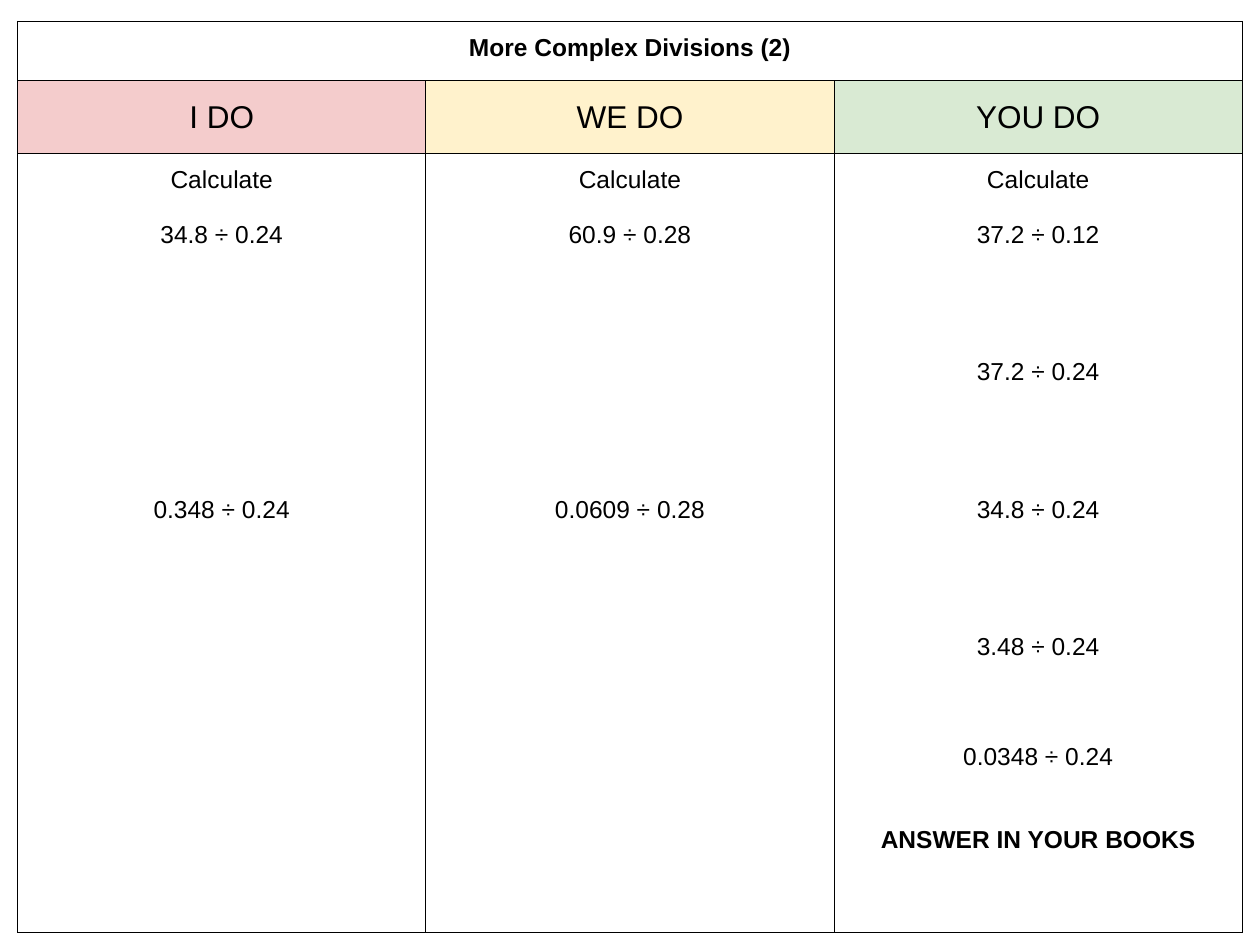
from lxml.etree import SubElement
from pptx import Presentation
from pptx.dml.color import RGBColor
from pptx.enum.text import MSO_ANCHOR, PP_ALIGN
from pptx.oxml.ns import qn
from pptx.util import Inches, Pt

BLACK = RGBColor(0x00, 0x00, 0x00)
PINK = RGBColor(0xF4, 0xCC, 0xCC)
CREAM = RGBColor(0xFF, 0xF2, 0xCC)
GREEN = RGBColor(0xD9, 0xEA, 0xD3)

LINE_PITCH = 15.7  # points from one 14 pt line to the next
ROW_HEIGHTS = (0.47, 0.58, 6.18)
COLUMN_WIDTH = 3.24
TITLE = "More Complex Divisions (2)"
ANSWER_NOTE = "ANSWER IN YOUR BOOKS"

# Heading, colour, and the lines below it as (text, empty lines above)
COLUMNS = [
    ("I DO", PINK,
     [("Calculate", 0), ("34.8 ÷ 0.24", 1), ("0.348 ÷ 0.24", 9)]),
    ("WE DO", CREAM,
     [("Calculate", 0), ("60.9 ÷ 0.28", 1), ("0.0609 ÷ 0.28", 9)]),
    ("YOU DO", GREEN,
     [("Calculate", 0), ("37.2 ÷ 0.12", 1), ("37.2 ÷ 0.24", 4),
      ("34.8 ÷ 0.24", 4), ("3.48 ÷ 0.24", 4), ("0.0348 ÷ 0.24", 3),
      (ANSWER_NOTE, 2)]),
]


def add_borders(cell):
    """Draw a thin black line on all four sides; call before filling."""
    tc_pr = cell._tc.get_or_add_tcPr()
    for side in ("lnL", "lnR", "lnT", "lnB"):
        ln = SubElement(tc_pr, qn(f"a:{side}"), w=str(Pt(0.75)))
        fill = SubElement(ln, qn("a:solidFill"))
        SubElement(fill, qn("a:srgbClr"), val=str(BLACK))


def style_cell(cell, color=None):
    cell.margin_left = cell.margin_right = Inches(0.1)
    cell.margin_top = cell.margin_bottom = Inches(0.1)
    add_borders(cell)
    if color is None:
        cell.fill.background()
    else:
        cell.fill.solid()
        cell.fill.fore_color.rgb = color


def write_lines(cell, lines, size=14, bold_texts=()):
    tf = cell.text_frame
    for i, (text, gap) in enumerate(lines):
        p = tf.add_paragraph() if i else tf.paragraphs[0]
        p.text = text
        p.alignment = PP_ALIGN.CENTER
        p.space_before = Pt(gap * LINE_PITCH)
        p.font.name = "Arial"
        p.font.size = Pt(size)
        p.font.bold = text in bold_texts
        p.font.color.rgb = BLACK


def add_lesson_table(s):
    n = len(COLUMNS)
    table = s.shapes.add_table(
        len(ROW_HEIGHTS), n, Inches(0.14), Inches(0.17),
        Inches(n * COLUMN_WIDTH), Inches(sum(ROW_HEIGHTS))).table
    table.first_row = table.horz_banding = False
    for row, height in zip(table.rows, ROW_HEIGHTS):
        row.height = Inches(height)

    for i, (heading, color, lines) in enumerate(COLUMNS):
        table.columns[i].width = Inches(COLUMN_WIDTH)
        title, head, body = (table.cell(r, i) for r in range(3))
        style_cell(title)
        style_cell(head, color)
        style_cell(body)
        head.vertical_anchor = MSO_ANCHOR.MIDDLE
        write_lines(head, [(heading, 0)], size=18)
        write_lines(body, lines, bold_texts=(ANSWER_NOTE,))

    table.cell(0, 0).merge(table.cell(0, n - 1))
    write_lines(table.cell(0, 0), [(TITLE, 0)], bold_texts=(TITLE,))


def main():
    prs = Presentation()
    prs.slide_width, prs.slide_height = Inches(10), Inches(7.5)
    s = prs.slides.add_slide(prs.slide_layouts[6])
    add_lesson_table(s)
    prs.save("out.pptx")


if __name__ == "__main__":
    main()
